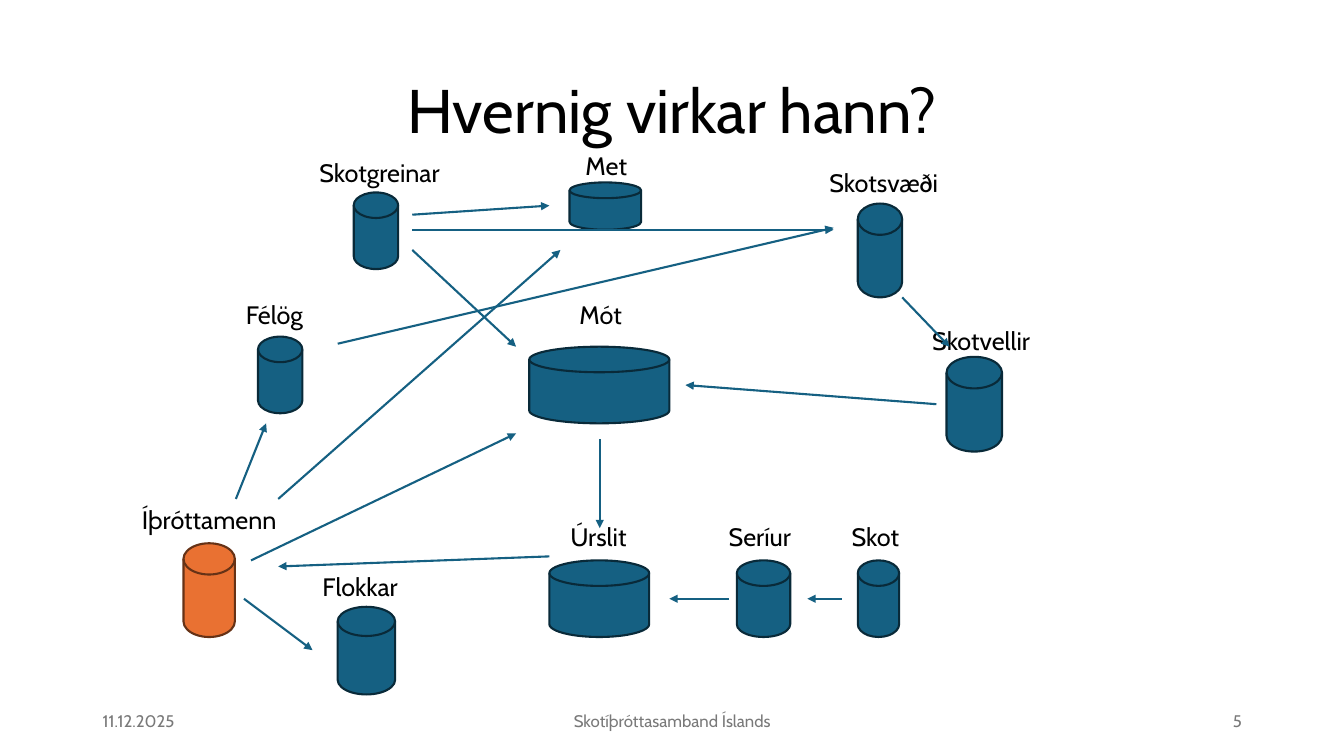
import pptx
import pptx.util
import pptx.dml.color
import pptx.enum.shapes
import pptx.enum.text
import pptx.oxml
import pptx.oxml.ns

Pt = pptx.util.Pt
Align = pptx.enum.text.PP_ALIGN
Anchor = pptx.enum.text.MSO_ANCHOR
Fit = pptx.enum.text.MSO_AUTO_SIZE
Kind = pptx.enum.shapes.MSO_SHAPE
CELL = pptx.util.Inches(0.1)  # the slide is a grid of 133.33 columns by 75 rows
BLUE, ORANGE, BLACK, GREY = "156082", "E97132", "000000", "797979"


def grid(*cells):
    """Turn counts of grid cells into lengths."""
    return [round(n * CELL) for n in cells]


def write(box, text, size, color, align=Align.LEFT, anchor=Anchor.TOP):
    frame = box.text_frame
    frame.auto_size = Fit.NONE
    frame.word_wrap = True
    frame.vertical_anchor = anchor
    para = frame.paragraphs[0]
    para.alignment = align
    run = para.add_run()
    run.text = text
    run.font.name = "Cabin"
    run.font.size = Pt(size)
    run.font.color.rgb = pptx.dml.color.RGBColor.from_string(color)
    return para


deck = pptx.Presentation()
deck.slide_width, deck.slide_height = grid(133.33, 75)
slide = deck.slides.add_slide(deck.slide_layouts[5])
shapes = slide.shapes

title = shapes.title
title.left, title.top, title.width, title.height = grid(9.2, 4, 115, 14.5)
head = write(title, "Hvernig virkar hann?", 44, BLACK, Align.CENTER, Anchor.MIDDLE)
head.line_spacing = 0.9

# Footer: text, left, width, alignment
footer = [
    ("11.12.2025", 9.2, 30, Align.LEFT),
    ("Skotíþróttasamband Íslands", 44.2, 45, Align.CENTER),
    ("5", 94.2, 30, Align.RIGHT),
]
for text, left, width, align in footer:
    box = shapes.add_textbox(*grid(left, 69.5, width, 4))
    write(box, text, 12, GREY, align, Anchor.MIDDLE)

# Data stores: name, label (left, top, width), disk (left, top, width, height)
stores = [
    ("Félög", (23.4, 29.2, 8.8), (25.6, 33.4, 4.4, 7.6)),
    ("Íþróttamenn", (13.1, 49.5, 17.6), (18.2, 53.9, 5.1, 9.3)),
    ("Skotgreinar", (30.7, 15.1, 17.6), (35.1, 19.1, 4.4, 7.6)),
    ("Skotsvæði", (81.3, 16.1, 15.4), (85.1, 20.2, 4.4, 9.3)),
    ("Mót", (56.5, 29.2, 15.8), (52.5, 34.4, 13.9, 7.6)),
    ("Úrslit", (55.6, 51.2, 15), (54.5, 55.6, 9.9, 7.6)),
    ("Seríur", (71.3, 51.2, 11.3), (73.1, 55.6, 5.3, 7.6)),
    ("Skot", (83.5, 51.2, 8.7), (85.1, 55.6, 4.1, 7.6)),
    ("Skotvellir", (91.5, 31.8, 14), (93.9, 35.4, 5.5, 9.4)),
    ("Flokkar", (31, 56.2, 12.6), (33.5, 60.2, 5.7, 8.7)),
    ("Met", (57.1, 14.4, 11.9), (56.5, 18.1, 7.1, 4.7)),
]
for name, label, place in stores:
    fill, edge = (ORANGE, "663216") if name == "Íþróttamenn" else (BLUE, "092A39")
    disk = shapes.add_shape(Kind.FLOWCHART_MAGNETIC_DISK, *grid(*place))
    disk.shadow.inherit = False
    disk.fill.solid()
    disk.fill.fore_color.rgb = pptx.dml.color.RGBColor.from_string(fill)
    disk.line.color.rgb = pptx.dml.color.RGBColor.from_string(edge)
    disk.line.width = Pt(1.5)
    write(shapes.add_textbox(*grid(*label, 4)), name, 18, BLACK)

# Arrows: from column and row, to column and row
arrows = [
    (23.4, 49.5, 26.4, 42),      # Íþróttamenn to Félög
    (24.2, 59.4, 31, 64.5),      # Íþróttamenn to Flokkar
    (40.9, 24.8, 51.2, 34.4),    # Skotgreinar to Mót
    (89.5, 29.5, 94.2, 34.4),    # Skotsvæði to Skotvellir
    (92.9, 40.1, 68, 38.2),      # Skotvellir to Mót
    (83.5, 59.4, 80.1, 59.4),    # Skot to Seríur
    (72.3, 59.4, 66.4, 59.4),    # Seríur to Úrslit
    (59.5, 43.6, 59.5, 52.4),    # Mót to Úrslit
    (24.9, 55.6, 51.2, 43),      # Íþróttamenn to Mót
    (40.9, 21.3, 54.5, 20.4),    # Skotgreinar to Met
    (27.6, 49.5, 55.6, 24.8),    # Íþróttamenn to Met
    (33.5, 34.1, 82.7, 22.6),    # Félög to Skotsvæði
    (40.9, 22.8, 82.7, 22.8),    # Skotgreinar to Skotsvæði
    (54.5, 55.2, 27.6, 56.2),    # Úrslit to Íþróttamenn
]
for ends in arrows:
    arrow = shapes.add_connector(pptx.enum.shapes.MSO_CONNECTOR.STRAIGHT, *grid(*ends))
    arrow.line.color.rgb = pptx.dml.color.RGBColor.from_string(BLUE)
    arrow.line.width = Pt(1.5)
    props = arrow.element.spPr
    tip = pptx.oxml.parse_xml(f'<a:tailEnd {pptx.oxml.ns.nsdecls("a")} type="triangle"/>')
    props.find(pptx.oxml.ns.qn("a:ln")).append(tip)
    props.append(pptx.oxml.parse_xml(f'<a:effectLst {pptx.oxml.ns.nsdecls("a")}/>'))

deck.save("out.pptx")
